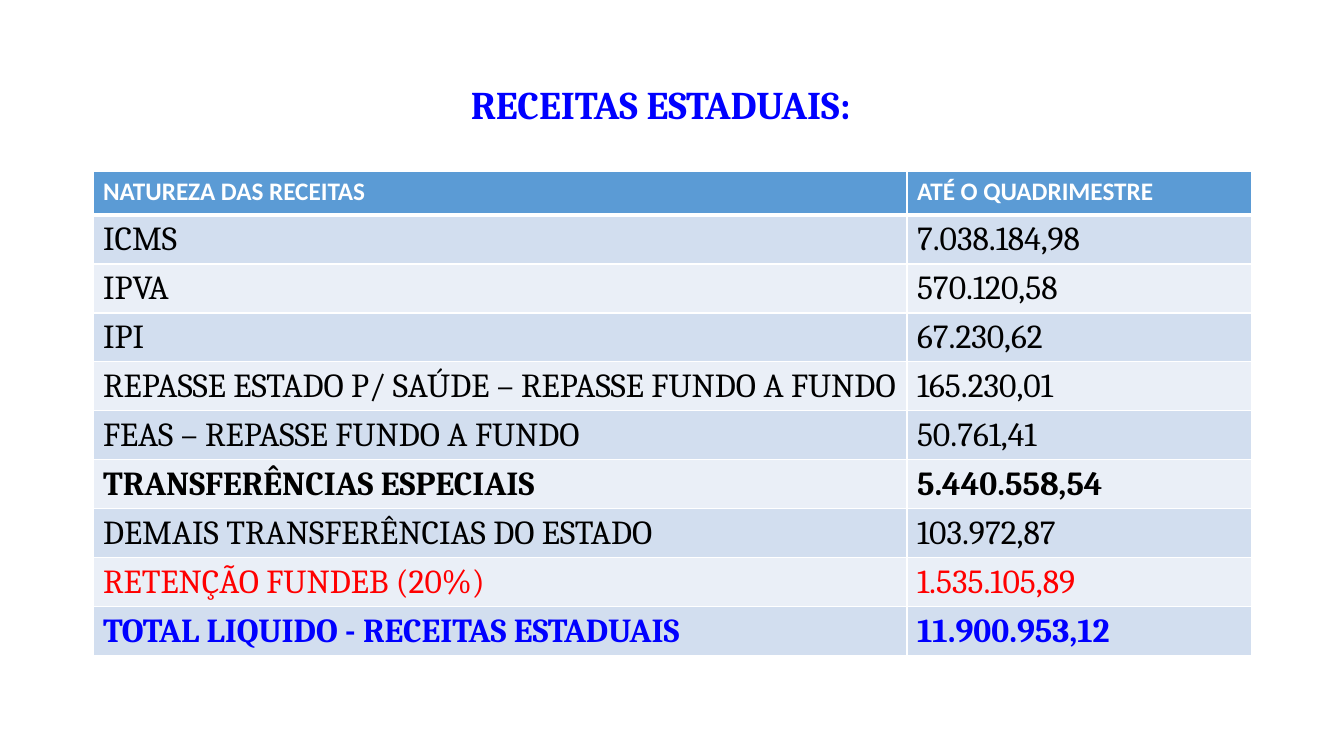
from dataclasses import dataclass

from lxml.etree import SubElement
from pptx import Presentation
from pptx.dml.color import RGBColor
from pptx.enum.text import MSO_ANCHOR, PP_ALIGN
from pptx.oxml.ns import qn
from pptx.util import Emu, Pt

TITLE = "RECEITAS ESTADUAIS:"
HEADER = ("NATUREZA DAS RECEITAS", "ATÉ O QUADRIMESTRE")
# Name, amount, row style
REVENUES = [
    ("ICMS", "7.038.184,98", "plain"),
    ("IPVA", "570.120,58", "plain"),
    ("IPI", "67.230,62", "plain"),
    ("REPASSE ESTADO P/ SAÚDE – REPASSE FUNDO A FUNDO", "165.230,01", "plain"),
    ("FEAS – REPASSE FUNDO A FUNDO", "50.761,41", "plain"),
    ("TRANSFERÊNCIAS ESPECIAIS", "5.440.558,54", "strong"),
    ("DEMAIS TRANSFERÊNCIAS DO ESTADO", "103.972,87", "plain"),
    ("RETENÇÃO FUNDEB (20%)", "1.535.105,89", "deduction"),
    ("TOTAL LIQUIDO - RECEITAS ESTADUAIS", "11.900.953,12", "total"),
]


@dataclass(frozen=True)
class Theme:
    heading_font: str = "Cambria"
    body_font: str = "Calibri"
    black: str = "000000"
    white: str = "FFFFFF"
    red: str = "FF0000"
    blue: str = "0000FF"
    header_fill: str = "5B9BD5"
    bands: tuple = ("D2DEEF", "EAEFF7")
    title_size: int = 28
    tab_size: int = 44
    header_size: int = 18
    row_size: int = 24
    thin: int = 1
    thick: int = 3


THEME = Theme()
ROW_STYLES = {
    "plain": dict(color=THEME.black),
    "strong": dict(color=THEME.black, bold=True),
    "deduction": dict(color=THEME.red),
    "total": dict(color=THEME.blue, bold=True),
}

SLIDE_SIZE = (1344, 756)
TITLE_BOX = (93, 47, 1159, 106)
TABLE_LEFT, TABLE_TOP = 93, 171
COLUMN_WIDTHS = (814, 345)
HEADER_HEIGHT, ROW_HEIGHT = 44, 49


def px(length):
    return Emu(round(length * 914400 / 100.8))


def add_text(paragraph, text, size, color, font=THEME.heading_font, bold=False):
    run = paragraph.add_run()
    run.text = text
    run.font.name = font
    run.font.size = Pt(size)
    run.font.bold = bold
    run.font.color.rgb = RGBColor.from_string(color)


def set_borders(cell, top, bottom):
    """Draw white borders; top and bottom are widths in points."""
    properties = cell._tc.get_or_add_tcPr()
    widths = {"L": THEME.thin, "R": THEME.thin, "T": top, "B": bottom}
    for position, (side, width) in enumerate(widths.items()):
        line = SubElement(properties, qn(f"a:ln{side}"), w=str(Pt(width)))
        fill = SubElement(line, qn("a:solidFill"))
        SubElement(fill, qn("a:srgbClr"), val=THEME.white)
        properties.insert(position, line)


def add_title(slide):
    title = slide.shapes.title
    title.left, title.top, title.width, title.height = map(px, TITLE_BOX)
    title.text_frame.vertical_anchor = MSO_ANCHOR.MIDDLE
    paragraph = title.text_frame.paragraphs[0]
    paragraph.alignment = PP_ALIGN.CENTER
    paragraph.line_spacing = 0.9
    add_text(paragraph, TITLE, THEME.title_size, THEME.blue, bold=True)
    add_text(paragraph, "\t", THEME.tab_size, THEME.black, font=THEME.body_font)


def add_revenue_table(slide):
    heights = [HEADER_HEIGHT] + [ROW_HEIGHT] * len(REVENUES)
    table = slide.shapes.add_table(
        len(heights), len(COLUMN_WIDTHS), px(TABLE_LEFT), px(TABLE_TOP),
        px(sum(COLUMN_WIDTHS)), px(sum(heights))).table
    for column, width in zip(table.columns, COLUMN_WIDTHS):
        column.width = px(width)
    for row, height in zip(table.rows, heights):
        row.height = px(height)

    header_format = dict(size=THEME.header_size, color=THEME.white,
                         font=THEME.body_font, bold=True)
    rows = [(HEADER, THEME.header_fill, header_format)]
    for index, (name, amount, style) in enumerate(REVENUES):
        row_format = dict(size=THEME.row_size, **ROW_STYLES[style])
        rows.append(((name, amount), THEME.bands[index % 2], row_format))

    for row_index, (texts, fill, text_format) in enumerate(rows):
        top = THEME.thick if row_index == 1 else THEME.thin
        bottom = THEME.thick if row_index == 0 else THEME.thin
        for column_index, text in enumerate(texts):
            cell = table.cell(row_index, column_index)
            cell.fill.solid()
            cell.fill.fore_color.rgb = RGBColor.from_string(fill)
            set_borders(cell, top, bottom)
            add_text(cell.text_frame.paragraphs[0], text, **text_format)


def main():
    presentation = Presentation()
    presentation.slide_width, presentation.slide_height = map(px, SLIDE_SIZE)
    slide = presentation.slides.add_slide(presentation.slide_layouts[5])
    add_title(slide)
    add_revenue_table(slide)
    presentation.save("out.pptx")


if __name__ == "__main__":
    main()
